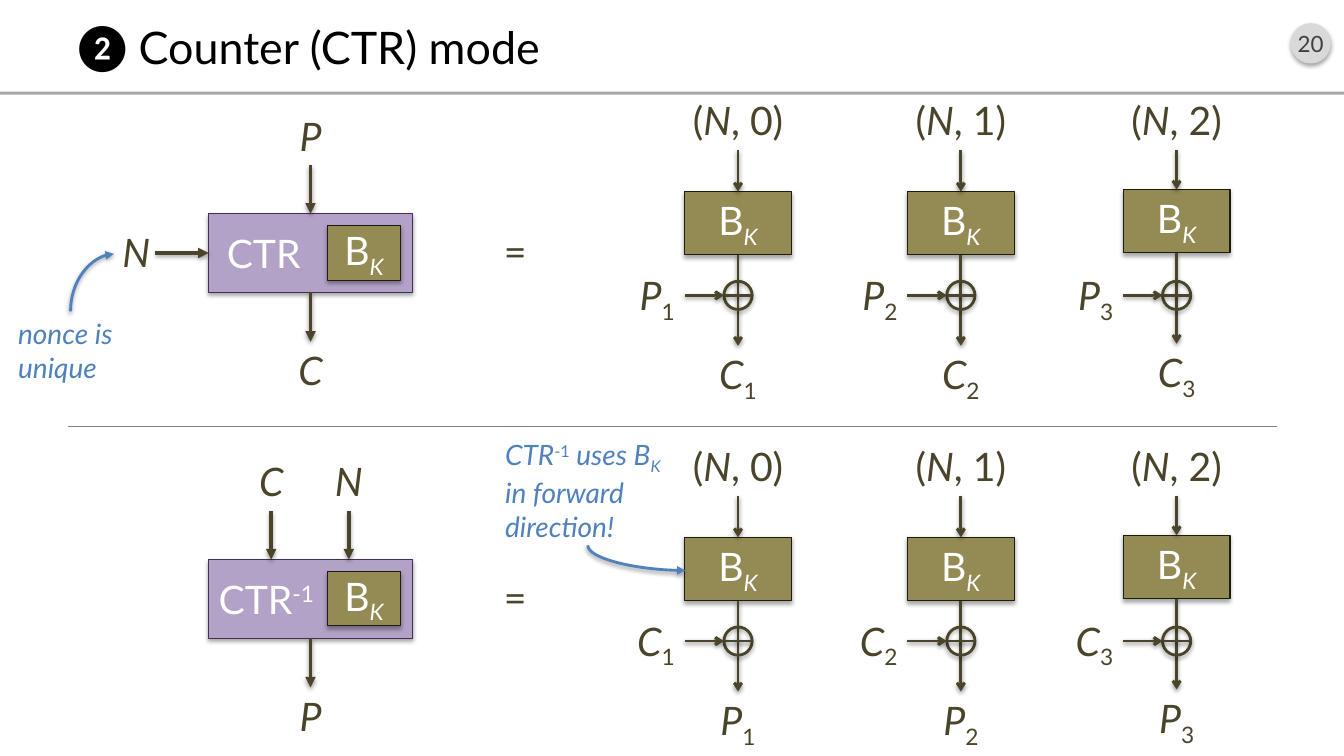
import lxml.etree
import pptx
import pptx.dml.color
import pptx.enum.shapes
import pptx.enum.text
import pptx.oxml
import pptx.oxml.ns
import pptx.util

PX = 9144
FONT = "Lato"
HALF_STEP = 343
LABEL_HEIGHT = 58
COLORS = {
    "ink": "4A452A", "block": "948A54", "block_edge": "1E1C11",
    "mode": "B3A2C7", "mode_edge": "403152", "note": "4F81BD",
    "badge": "D9D9D9", "badge_text": "404040", "rule": "A6A6A6",
    "divider": "808080", "white": "FFFFFF", "black": "000000",
}
SHAPE = pptx.enum.shapes.MSO_SHAPE
CONNECTOR = pptx.enum.shapes.MSO_CONNECTOR
ALIGN = pptx.enum.text.PP_ALIGN
ANCHOR = pptx.enum.text.MSO_ANCHOR
CIPHER = [("B",), ("K", True, -25)]


def rgb(name):
    """Return the named colour."""
    return pptx.dml.color.RGBColor.from_string(COLORS[name])


def add_effects(item, distance=None, opacity=35):
    """Give an item a soft downward shadow, or none at all."""
    effects = lxml.etree.SubElement(item._element.spPr, pptx.oxml.ns.qn("a:effectLst"))
    if distance:
        effects.append(pptx.oxml.parse_xml(
            f'<a:outerShdw {pptx.oxml.ns.nsdecls("a")} blurRad="40000" dist="{distance}"'
            ' dir="5400000" rotWithShape="0"><a:srgbClr val="000000">'
            f'<a:alpha val="{opacity * 1000}"/></a:srgbClr></a:outerShdw>'))


def write(item, spans, size, color, align=ALIGN.LEFT, anchor=ANCHOR.TOP, inset=10):
    """Fill an item with one paragraph of (text, italic, baseline) spans."""
    frame = item.text_frame
    frame.word_wrap = True
    frame.vertical_anchor = anchor
    frame.margin_left = frame.margin_right = inset * PX
    frame.margin_top = frame.margin_bottom = 5 * PX
    para = frame.paragraphs[0]
    para.alignment = align
    for text, *style in spans:
        italic, baseline = (style + [False, 0][len(style):])
        span = para.add_run()
        span.text = text
        span.font.name = FONT
        span.font.size = pptx.util.Pt(size)
        span.font.italic = italic
        span.font.color.rgb = rgb(color)
        if baseline:
            span.font._element.set("baseline", str(baseline * 1000))


def add_label(page, left, top, width, spans, align=ALIGN.CENTER, inset=10):
    """Add a one-line diagram label."""
    box = page.shapes.add_textbox(left * PX, top * PX, width * PX, LABEL_HEIGHT * PX)
    write(box, spans, 28, "ink", align, inset=inset)
    return box


def add_note(page, left, top, width, height, spans):
    """Add a blue remark."""
    box = page.shapes.add_textbox(left * PX, top * PX, width * PX, height * PX)
    write(box, spans, 20, "note", inset=0)


def add_figure(page, kind, left, top, width, height, fill=None, edge=None, weight=0.75, shadow=True):
    """Add a preset shape."""
    shape = page.shapes.add_shape(kind, left * PX, top * PX, width * PX, height * PX)
    if fill:
        shape.fill.solid()
        shape.fill.fore_color.rgb = rgb(fill)
    else:
        shape.fill.background()
    if edge:
        shape.line.color.rgb = rgb(edge)
        shape.line.width = pptx.util.Pt(weight)
    else:
        shape.line.fill.background()
    add_effects(shape, 23000 if shadow else None)
    return shape


def add_cipher(page, left, top, width, height):
    """Add a block cipher rectangle."""
    block = add_figure(page, SHAPE.RECTANGLE, left, top, width, height, "block", "block_edge")
    write(block, CIPHER, 28, "white", ALIGN.CENTER, ANCHOR.MIDDLE)
    return block


def style_line(line, color, weight, head=None, shadow=True):
    """Set a connector's stroke, arrowhead and shadow."""
    line.line.color.rgb = rgb(color)
    line.line.width = pptx.util.Pt(weight)
    if head:
        tail = lxml.etree.SubElement(line.line._get_or_add_ln(), pptx.oxml.ns.qn("a:tailEnd"))
        tail.set("type", head)
    add_effects(line, 20000 if shadow else None, 38)


def connect(page, start, stop, weight=2, head="arrow", color="ink", shadow=True):
    """Draw a straight line between points or (shape, site) pairs."""
    line = page.shapes.add_connector(CONNECTOR.STRAIGHT, 0, 0, 0, 0)
    if isinstance(start[0], int):
        line.begin_x, line.begin_y = (value * PX for value in start)
    else:
        line.begin_connect(*start)
    if isinstance(stop[0], int):
        line.end_x, line.end_y = (value * PX for value in stop)
    else:
        line.end_connect(*stop)
    style_line(line, color, weight, head, shadow)


def add_curve(page, start, stop, degrees):
    """Draw a quarter-turn arrow, rotated about its centre."""
    curve = page.shapes.add_connector(CONNECTOR.CURVE, *(value * PX for value in start + stop))
    properties = curve._element.spPr
    properties.find(pptx.oxml.ns.qn("a:xfrm")).set("rot", str(degrees * 60000))
    properties.find(pptx.oxml.ns.qn("a:prstGeom")).set("prst", "curvedConnector2")
    style_line(curve, "note", 2, "triangle")


def add_header(page, title, number):
    """Place the title, the page badge and the rule below them."""
    badge = add_figure(page, SHAPE.OVAL, 1280, 23, 40, 40, "badge")
    write(badge, [(number,)], 16, "badge_text", ALIGN.CENTER, ANCHOR.MIDDLE, 0)
    add_figure(page, SHAPE.RECTANGLE, 0, 91, 1333, 3, "rule", shadow=False)
    heading = page.shapes.title
    heading.left, heading.top, heading.width, heading.height = (
        value * PX for value in (67, 16, 1200, 60))
    write(heading, [(title,)], 32, "black", anchor=ANCHOR.MIDDLE)


def add_stream(page, left, top, lift, index, source, result):
    """Draw one counter block with its XOR and output."""
    center, middle = left + 53, top + 202
    counter = add_label(page, center - 77, top, 154, [("(",), ("N", True), (f", {index}",), (")",)])
    block = add_cipher(page, left, top + 99 - lift, 106, 63)
    subscript = (str(index + 1), False, -25)
    output = add_label(page, center - 77, top + 252 - lift, 154, [(result, True), subscript])
    connect(page, (counter, 2), (block, 0))
    connect(page, (block, 2), (output, 0))
    add_figure(page, SHAPE.OVAL, center - 14, middle - 14, 28, 28, edge="ink", weight=2)
    connect(page, (center - 14, middle), (center + 14, middle), head=None)
    operand = add_label(page, left - 77, middle - 29, 77, [(source, True), subscript], ALIGN.RIGHT)
    connect(page, (operand, 3), (center - 14, middle))


def add_mode(page, left, top, name, inset, result):
    """Draw the summary box with its output and equals sign, and return the box."""
    box = add_figure(page, SHAPE.RECTANGLE, left, top, 202, 78, "mode", "mode_edge")
    write(box, name, 28, "white", anchor=ANCHOR.MIDDLE, inset=inset)
    add_cipher(page, left + 118, top + 12, 72, 54)
    output = add_label(page, left + 57, top + 127, 88, [(result, True)])
    connect(page, (box, 2), (output, 0), 2.5, "triangle")
    add_label(page, left + 260, top + 9, 88, [("=",)])
    return box


def add_half(page, top, name, inset, source, result):
    """Draw one direction of the mode and return its summary box."""
    for index, (left, lift) in enumerate([(679, 0), (900, 0), (1114, 2)]):
        add_stream(page, left, top, lift, index, source, result)
    return add_mode(page, 207, top + 121, name, inset, result)


def add_encryption(page, top):
    """Draw the encryption half with the nonce remark."""
    box = add_half(page, top, [("CTR",)], 18, "P", "C")
    plain = add_label(page, 264, top + 15, 88, [("P", True)])
    connect(page, (plain, 2), (box, 0), 2.5, "triangle")
    nonce = add_label(page, 113, top + 131, 41, [("N", True)], ALIGN.RIGHT, 5)
    connect(page, (nonce, 3), (box, 1), 2.5, "triangle")
    add_note(page, 18, top + 218, 104, 77, [("nonce is unique", True)])
    add_curve(page, (120, top + 211), (63, top + 168), 90)


def add_decryption(page, top):
    """Draw the decryption half with the direction remark."""
    add_half(page, top, [("CTR",), ("-1", False, 30)], 10, "C", "P")
    for center, text in [(269, "C"), (346, "N")]:
        label = add_label(page, center - 44, top + 15, 88, [(text, True)])
        connect(page, (label, 2), (center, top + 121), 2.5, "triangle")
    add_note(page, 501, top - 5, 164, 111, [
        ("CTR", True), ("-1", False, 30), (" uses B", True), ("K", True, -25),
        (" in forward direction!", True)])
    add_curve(page, (644, top + 71), (619, top + 168), 270)


def main():
    """Build the deck."""
    deck = pptx.Presentation()
    deck.slide_width, deck.slide_height = 1333 * PX, 750 * PX
    page = deck.slides.add_slide(deck.slide_layouts[5])
    add_header(page, "❷ Counter (CTR) mode", "20")
    add_encryption(page, 91)
    connect(page, (67, 423), (1267, 423), 1, None, "divider", False)
    add_decryption(page, 91 + HALF_STEP)
    deck.save("out.pptx")


if __name__ == "__main__":
    main()
